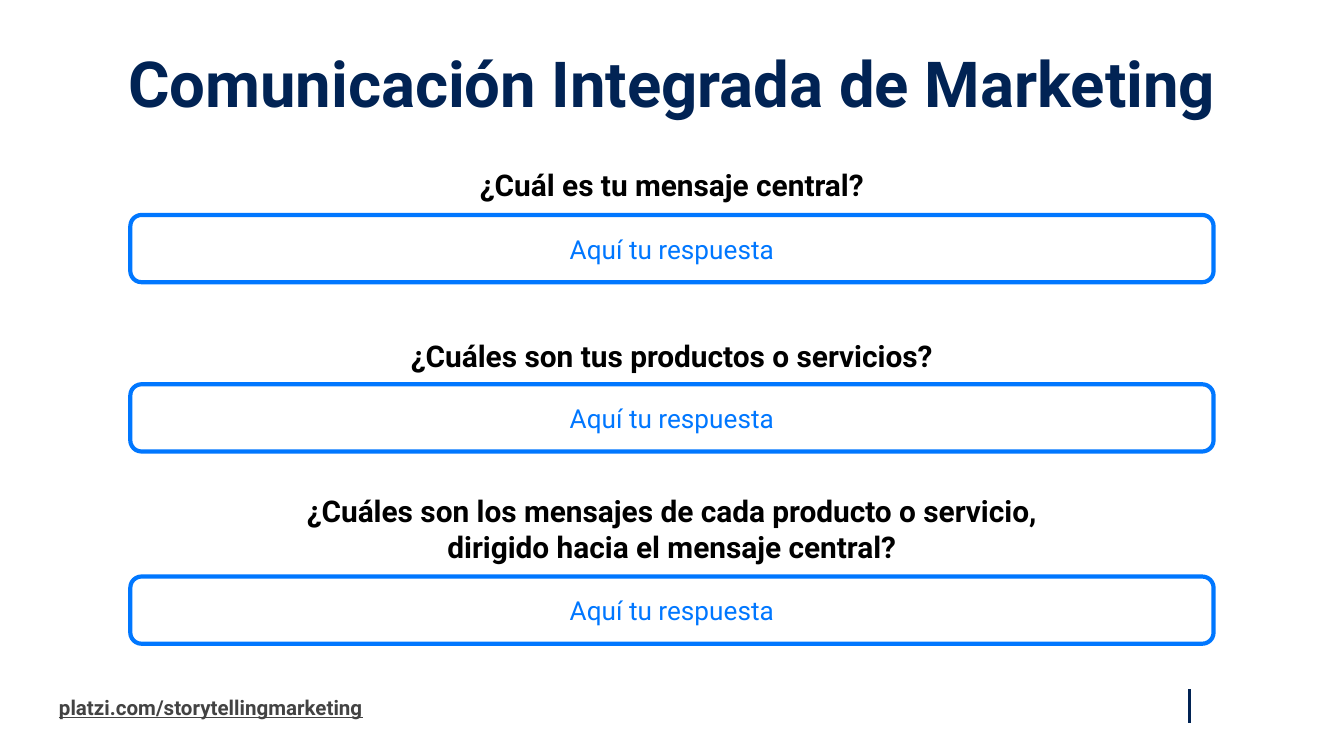
from dataclasses import dataclass

from lxml.etree import SubElement
from pptx import Presentation
from pptx.dml.color import RGBColor
from pptx.enum.shapes import MSO_CONNECTOR, MSO_SHAPE
from pptx.enum.text import MSO_ANCHOR, MSO_AUTO_SIZE, PP_ALIGN
from pptx.oxml.ns import qn
from pptx.util import Inches, Pt

TITLE = "Comunicación Integrada de Marketing"
ANSWER = "Aquí tu respuesta"
ADDRESS = "platzi.com/storytellingmarketing"
QUESTIONS = [
    {"text": "¿Cuál es tu mensaje central?", "answer_top": 1.6, "height": 0.45, "width": 7.36},
    {"text": "¿Cuáles son tus productos o servicios?", "answer_top": 2.86, "height": 0.43, "width": 7.36},
    {"text": "¿Cuáles son los mensajes de cada producto o servicio, dirigido hacia el mensaje central?",
     "answer_top": 4.29, "height": 0.71, "width": 6.3},
]


@dataclass(frozen=True)
class Theme:
    font: str = "Roboto"
    navy: RGBColor = RGBColor(0x01, 0x23, 0x54)
    blue: RGBColor = RGBColor(0x00, 0x77, 0xFF)
    black: RGBColor = RGBColor(0, 0, 0)
    grey: RGBColor = RGBColor(0x43, 0x43, 0x43)
    title_size: int = 34
    question_size: int = 16
    answer_size: int = 14
    footer_size: int = 11


THEME = Theme()
SLIDE_WIDTH = 10
SLIDE_HEIGHT = SLIDE_WIDTH * 9 / 16
MARGIN = 0.34
INSET = 0.1
ANSWER_WIDTH, ANSWER_HEIGHT = 8.06, 0.5


def centred(top, width, height):
    return [Inches(value) for value in ((SLIDE_WIDTH - width) / 2, top, width, height)]


def write(shape, text, size, color, bold=True, underline=None,
          align=PP_ALIGN.CENTER, anchor=MSO_ANCHOR.MIDDLE):
    frame = shape.text_frame
    frame_format = {"word_wrap": True, "auto_size": MSO_AUTO_SIZE.NONE, "vertical_anchor": anchor}
    for side in ("left", "top", "right", "bottom"):
        frame_format[f"margin_{side}"] = Inches(INSET)
    for name, value in frame_format.items():
        setattr(frame, name, value)
    paragraph = frame.paragraphs[0]
    paragraph.alignment = align
    run = paragraph.add_run()
    run.text = text
    font_format = {"name": THEME.font, "size": Pt(size), "bold": bold, "underline": underline}
    for name, value in font_format.items():
        setattr(run.font, name, value)
    run.font.color.rgb = color
    return paragraph


def add_title(slide):
    title = slide.shapes.title
    box = centred(MARGIN, SLIDE_WIDTH - 2 * MARGIN, 0.59)
    for name, value in zip(("left", "top", "width", "height"), box):
        setattr(title, name, value)
    paragraph = write(title, TITLE, THEME.title_size, THEME.navy, anchor=MSO_ANCHOR.TOP)
    paragraph.line_spacing = 0.8


def add_question(slide, text, answer_top, height, width):
    question = slide.shapes.add_textbox(*centred(answer_top - height, width, height))
    write(question, text, THEME.question_size, THEME.black)
    answer = slide.shapes.add_shape(
        MSO_SHAPE.ROUNDED_RECTANGLE, *centred(answer_top, ANSWER_WIDTH, ANSWER_HEIGHT))
    answer.shadow.inherit = False
    answer.fill.background()
    answer.line.color.rgb = THEME.blue
    answer.line.width = Pt(2.25)
    write(answer, ANSWER, THEME.answer_size, THEME.blue, bold=False)


def add_footer(slide):
    address = slide.shapes.add_textbox(Inches(MARGIN), Inches(5.09), Inches(3.11), Inches(0.34))
    write(address, ADDRESS, THEME.footer_size, THEME.grey, underline=True, align=PP_ALIGN.LEFT)
    divider = slide.shapes.add_connector(
        MSO_CONNECTOR.STRAIGHT, Inches(8.85), Inches(5.13), Inches(8.85), Inches(5.38))
    divider.line.color.rgb = THEME.navy
    divider.line.width = Pt(1.5)
    SubElement(divider.element.spPr, qn("a:effectLst"))


def main():
    presentation = Presentation()
    presentation.slide_width = Inches(SLIDE_WIDTH)
    presentation.slide_height = Inches(SLIDE_HEIGHT)
    slide = presentation.slides.add_slide(presentation.slide_layouts.get_by_name("Title Only"))
    add_footer(slide)
    add_title(slide)
    for question in QUESTIONS:
        add_question(slide, **question)
    presentation.save("out.pptx")


if __name__ == "__main__":
    main()
